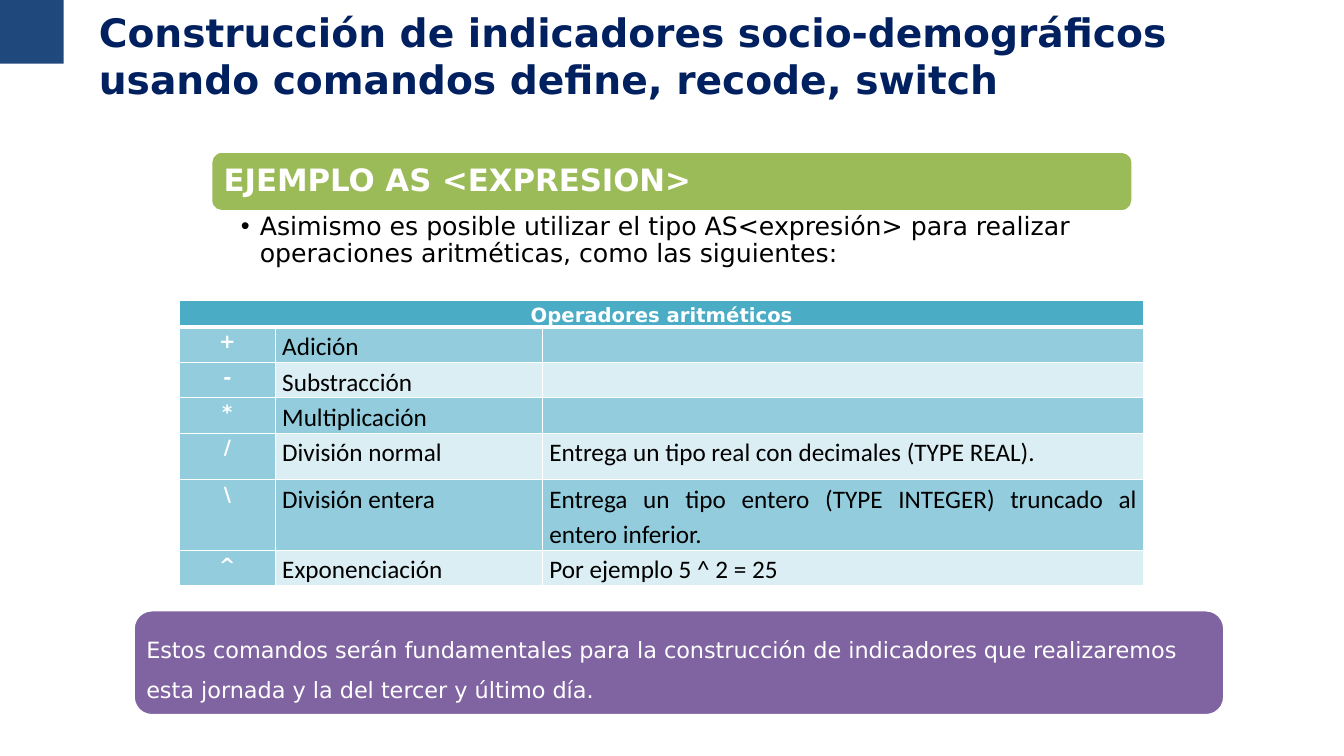
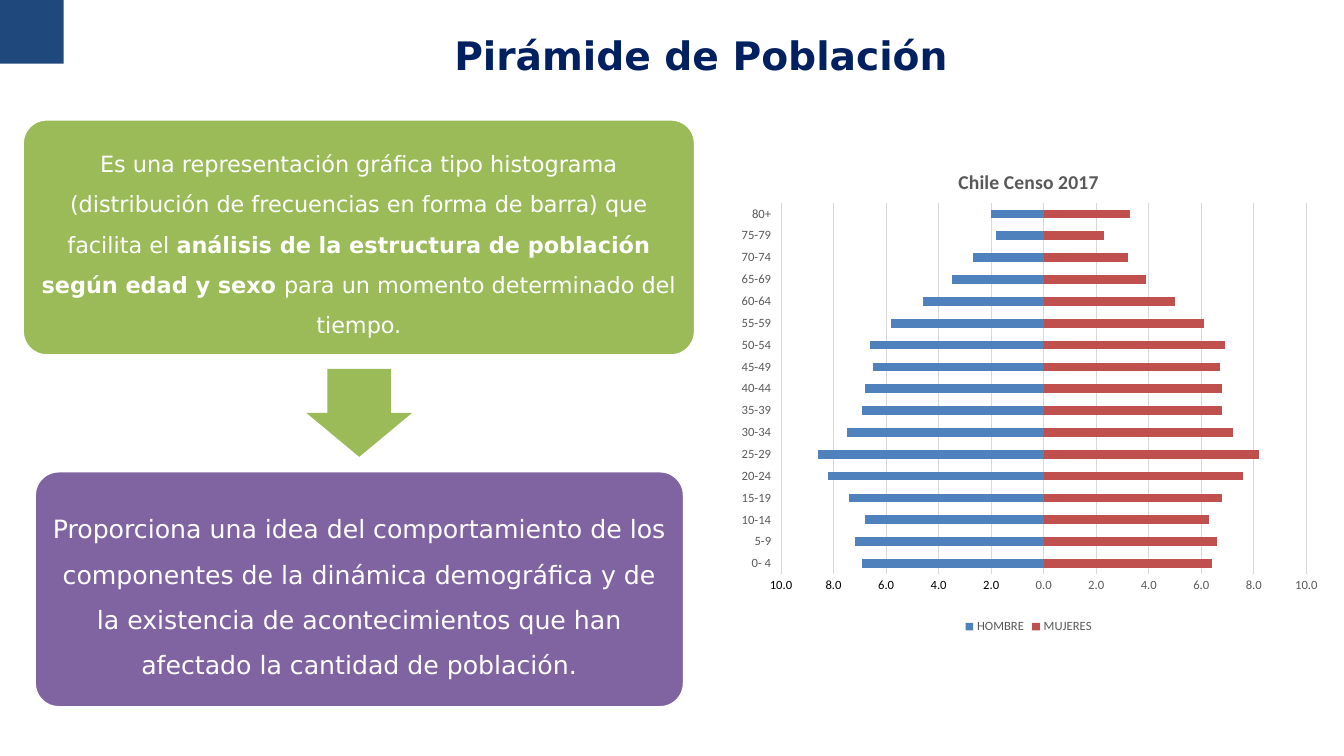
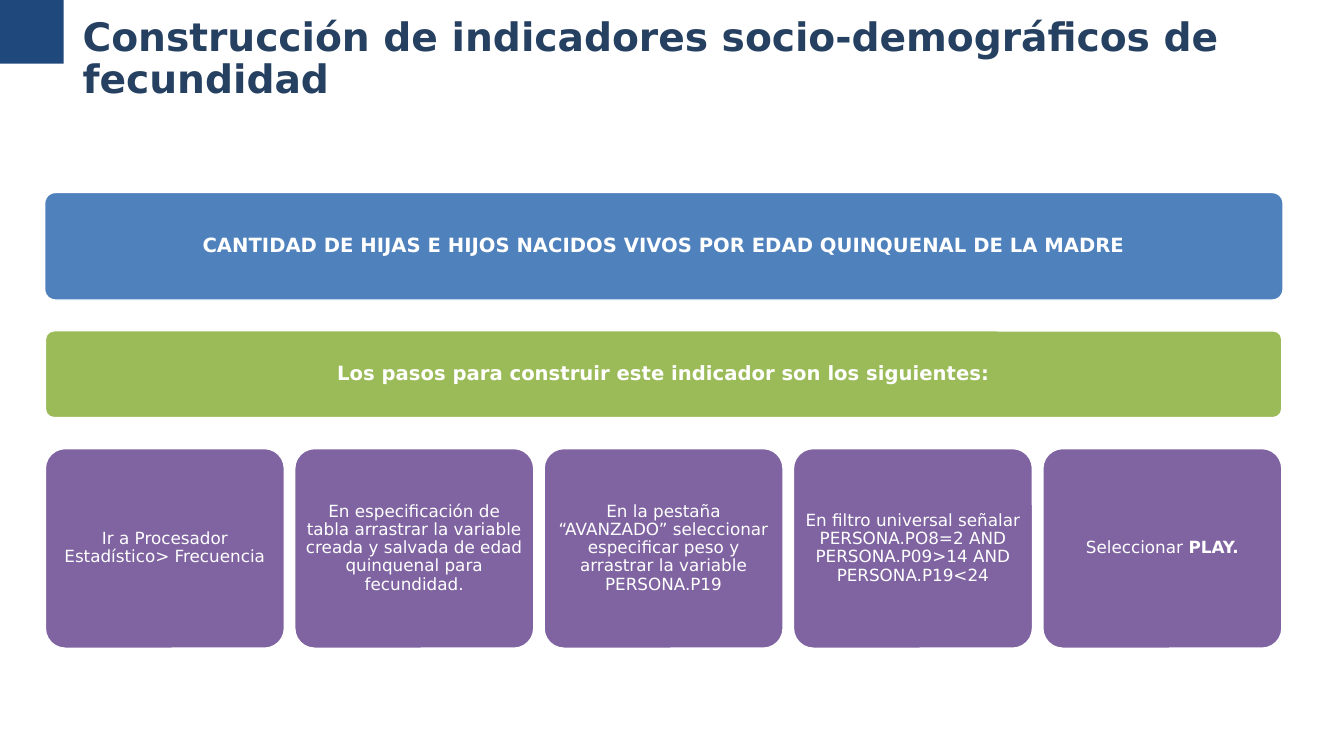
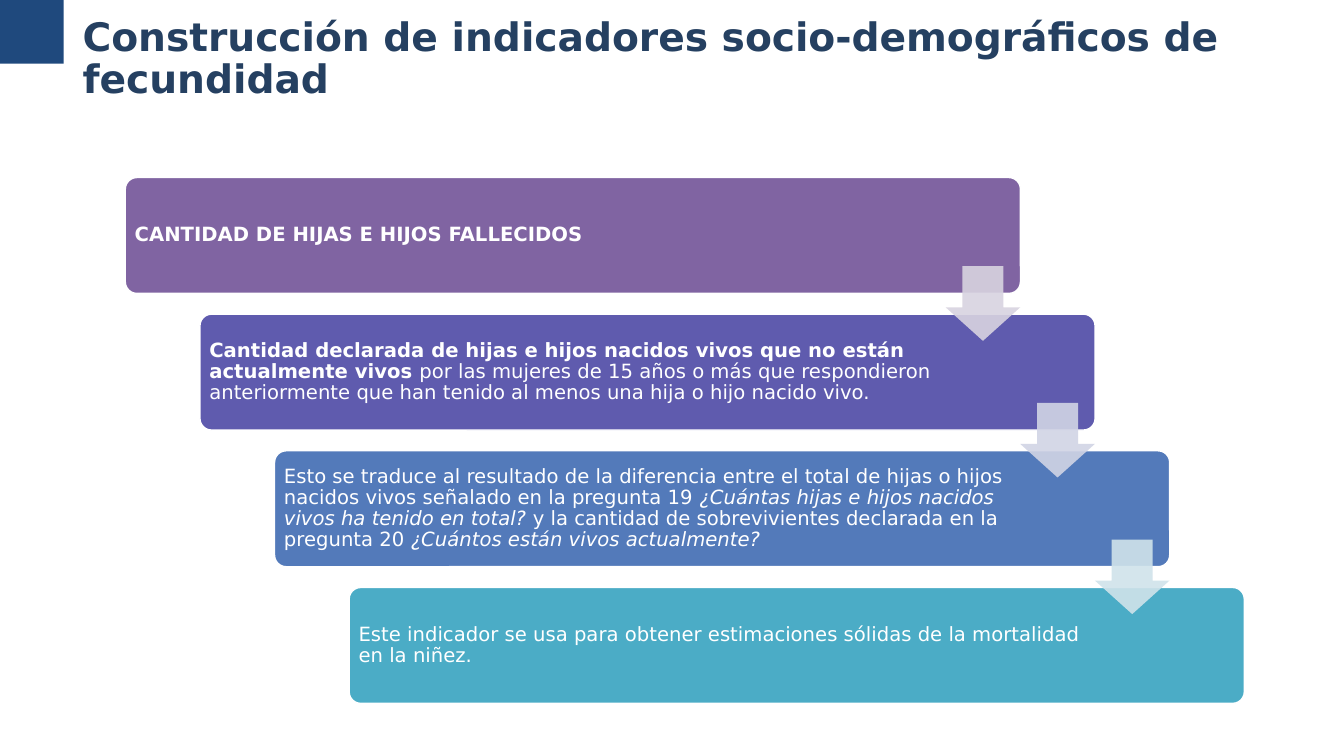
from pptx import Presentation
from pptx.chart.data import CategoryChartData
from pptx.dml.color import RGBColor
from pptx.enum.chart import XL_CHART_TYPE, XL_LEGEND_POSITION, XL_TICK_LABEL_POSITION, XL_TICK_MARK
from pptx.enum.shapes import MSO_SHAPE
from pptx.enum.text import MSO_ANCHOR, MSO_AUTO_SIZE, PP_ALIGN
from pptx.oxml import parse_xml
from pptx.oxml.ns import nsdecls, qn
from pptx.util import Pt

WHITE = RGBColor(0xFF, 0xFF, 0xFF)
BLACK = RGBColor(0x00, 0x00, 0x00)
NAVY = RGBColor(0x00, 0x20, 0x60)
SLATE = RGBColor(0x25, 0x40, 0x61)
CORNER_BLUE = RGBColor(0x1F, 0x49, 0x7D)
BLUE = RGBColor(0x4F, 0x81, 0xBD)
RED = RGBColor(0xC0, 0x50, 0x4D)
GREEN = RGBColor(0x9B, 0xBB, 0x59)
PURPLE = RGBColor(0x80, 0x64, 0xA2)
INDIGO = RGBColor(0x5F, 0x5B, 0xAE)
STEEL = RGBColor(0x53, 0x7A, 0xBA)
TEAL = RGBColor(0x4B, 0xAC, 0xC6)
TEAL_MID = RGBColor(0x93, 0xCD, 0xDD)
TEAL_PALE = RGBColor(0xDB, 0xEE, 0xF4)
LILAC_PALE = RGBColor(0xD8, 0xD3, 0xE0)
INDIGO_PALE = RGBColor(0xD1, 0xD4, 0xE5)
AQUA_PALE = RGBColor(0xD0, 0xE3, 0xEA)
GRAY = RGBColor(0x59, 0x59, 0x59)
GRID_GRAY = RGBColor(0xD9, 0xD9, 0xD9)

HEADING_FONT = "DejaVu Sans"
TABLE_FONT = "Calibri"
LAYOUT_CONTENT, LAYOUT_TITLE_ONLY = 1, 5

FERTILITY_TITLE = "Construcción de indicadores socio-demográficos de fecundidad"

OPERATORS = [
    ("+", "Adición", ""),
    ("-", "Substracción", ""),
    ("*", "Multiplicación", ""),
    ("/", "División normal", "Entrega un tipo real con decimales (TYPE REAL)."),
    ("\\", "División entera", "Entrega un tipo entero (TYPE INTEGER) truncado al entero inferior."),
    ("^", "Exponenciación", "Por ejemplo 5 ^ 2 = 25"),
]
OPERATOR_COLUMNS = [68.4, 190.8, 429.8]
OPERATOR_ROWS = [19, 25, 25, 25, 33, 50.6, 25]

AGES = ["0- 4"] + [f"{age}-{age + 4}" for age in range(5, 80, 5)] + ["80+"]
MEN = [-6.9, -7.2, -6.8, -7.4, -8.2, -8.6, -7.5, -6.9, -6.8,
       -6.5, -6.6, -5.8, -4.6, -3.5, -2.7, -1.8, -2]
WOMEN = [6.4, 6.6, 6.3, 6.8, 7.6, 8.2, 7.2, 6.8, 6.8,
         6.7, 6.9, 6.1, 5, 3.9, 3.2, 2.3, 3.3]

STEPS = [
    [("Ir a Procesador Estadístico> Frecuencia", "")],
    [("En especificación de tabla arrastrar la variable creada y salvada "
      "de edad quinquenal para fecundidad.", "")],
    [("En la pestaña “AVANZADO” seleccionar especificar peso y arrastrar "
      "la variable PERSONA.P19", "")],
    [("En filtro universal señalar PERSONA.PO8=2 AND PERSONA.P09>14 AND PERSONA.P19<24", "")],
    [("Seleccionar ", ""), ("PLAY.", "bold")],
]

DEATHS = [
    (PURPLE, LILAC_PALE, [("CANTIDAD DE HIJAS E HIJOS FALLECIDOS", "bold")]),
    (INDIGO, INDIGO_PALE, [
        ("Cantidad declarada de hijas e hijos nacidos vivos que no están actualmente vivos ", "bold"),
        ("por las mujeres de 15 años o más que respondieron anteriormente "
         "que han tenido al menos una hija o hijo nacido vivo.", "")]),
    (STEEL, AQUA_PALE, [
        ("Esto se traduce al resultado de la diferencia entre el total de hijas o hijos "
         "nacidos vivos señalado en la pregunta 19 ", ""),
        ("¿Cuántas hijas e hijos nacidos vivos ha tenido en total? ", "italic"),
        ("y la cantidad de sobrevivientes declarada en la pregunta 20 ", ""),
        ("¿Cuántos están vivos actualmente?", "italic")]),
    (TEAL, None, [("Este indicador se usa para obtener estimaciones sólidas "
                   "de la mortalidad en la niñez.", "")]),
]


def points(box):
    return [Pt(length) for length in box]


def place(shape, box):
    shape.left, shape.top, shape.width, shape.height = points(box)


def style_font(font, size, color, name=HEADING_FONT, bold=None):
    font.name, font.size, font.bold = name, Pt(size), bold
    font.color.rgb = color


def set_insets(holder, left, top, right, bottom):
    holder.margin_left, holder.margin_top = Pt(left), Pt(top)
    holder.margin_right, holder.margin_bottom = Pt(right), Pt(bottom)


def add_corner(deck, page):
    corner = page.shapes.add_shape(MSO_SHAPE.RECTANGLE, *points((0, 0, 45.5, 45.5)))
    corner.shadow.inherit = False
    corner.fill.solid()
    corner.fill.fore_color.rgb = CORNER_BLUE
    corner.line.fill.background()
    corner.element.nvSpPr.cNvPr.set("id", "90")
    deck.slide_master.shapes.element.insert(2, corner.element)


def add_page(deck, layout, title, box, color=NAVY, align=PP_ALIGN.LEFT, spacing=1.0):
    page = deck.slides.add_slide(deck.slide_layouts[layout])
    place(page.shapes.title, box)
    frame = page.shapes.title.text_frame
    frame.text = title
    frame.word_wrap = True
    frame.auto_size = MSO_AUTO_SIZE.NONE
    frame.vertical_anchor = MSO_ANCHOR.MIDDLE
    set_insets(frame, 7.2, 3.6, 7.2, 3.6)
    para = frame.paragraphs[0]
    para.alignment, para.line_spacing = align, spacing
    style_font(para.font, 28, color, bold=True)
    return page


def add_fertility_page(deck):
    return add_page(deck, LAYOUT_TITLE_ONLY, FERTILITY_TITLE, (51.8, 3.6, 882.7, 77.8), SLATE, spacing=0.9)


def add_panel(page, box, color, spans, size, align=PP_ALIGN.CENTER, spacing=0.9,
              inset=4.3, right_inset=None, corner=0.1):
    panel = page.shapes.add_shape(MSO_SHAPE.ROUNDED_RECTANGLE, *points(box))
    panel.shadow.inherit = False
    panel.adjustments[0] = corner
    panel.fill.solid()
    panel.fill.fore_color.rgb = color
    panel.line.color.rgb = WHITE
    panel.line.width = Pt(1)
    frame = panel.text_frame
    frame.word_wrap = True
    frame.vertical_anchor = MSO_ANCHOR.MIDDLE
    set_insets(frame, inset, inset, right_inset or inset, inset)
    para = frame.paragraphs[0]
    para.alignment, para.line_spacing = align, spacing
    style_font(para.font, size, WHITE)
    for text, emphasis in spans:
        span = para.add_run()
        span.text = text
        if emphasis:
            setattr(span.font, emphasis, True)


def add_down_arrow(page, box, color, shaft, head, opacity=None):
    arrow = page.shapes.add_shape(MSO_SHAPE.DOWN_ARROW, *points(box))
    arrow.shadow.inherit = False
    arrow.adjustments[0], arrow.adjustments[1] = shaft, head
    arrow.fill.solid()
    arrow.fill.fore_color.rgb = color
    arrow.line.fill.background()
    if opacity:
        for tint in arrow.element.iter(qn("a:srgbClr")):
            tint.append(parse_xml(f'<a:alpha {nsdecls("a")} val="{opacity * 1000}"/>'))


def fill_bullet(page, box, text):
    body = page.placeholders[1]
    place(body, box)
    frame = body.text_frame
    frame.text = text
    frame.word_wrap = True
    frame.auto_size = MSO_AUTO_SIZE.NONE
    set_insets(frame, 20.9, 2.2, 10, 2.2)
    para = frame.paragraphs[0]
    properties = para._p.get_or_add_pPr()
    properties.set("marL", str(Pt(13.5)))
    properties.set("indent", str(Pt(-13.5)))
    para.space_before = Pt(0)
    para.line_spacing = 0.9
    style_font(para.font, 18, BLACK)


def style_cell(cell, text, fill, align, size, color, font, bold, bottom=1):
    properties = cell._tc.get_or_add_tcPr()
    for side, width in (("L", 1), ("R", 1), ("T", 1), ("B", bottom)):
        properties.append(parse_xml(
            f'<a:ln{side} {nsdecls("a")} w="{Pt(width)}"><a:solidFill>'
            f'<a:srgbClr val="{WHITE}"/></a:solidFill></a:ln{side}>'))
    cell.fill.solid()
    cell.fill.fore_color.rgb = fill
    set_insets(cell, 5, 0, 5, 0)
    cell.text = text
    para = cell.text_frame.paragraphs[0]
    para.alignment, para.line_spacing = align, 1.15
    style_font(para.font, size, color, font, bold)


def add_operator_table(page, left, top):
    box = (left, top, sum(OPERATOR_COLUMNS), sum(OPERATOR_ROWS))
    table = page.shapes.add_table(len(OPERATOR_ROWS), len(OPERATOR_COLUMNS), *points(box)).table
    for column, width in zip(table.columns, OPERATOR_COLUMNS):
        column.width = Pt(width)
    for row, height in zip(table.rows, OPERATOR_ROWS):
        row.height = Pt(height)
    symbol_style = (PP_ALIGN.CENTER, 14, WHITE, HEADING_FONT, True)
    detail_style = (PP_ALIGN.JUSTIFY, 18, BLACK, TABLE_FONT, False)
    table.cell(0, 0).merge(table.cell(0, 2))
    for index in range(3):
        heading = "" if index else "Operadores aritméticos"
        style_cell(table.cell(0, index), heading, TEAL, *symbol_style, bottom=3)
    for row, (symbol, *details) in enumerate(OPERATORS, 1):
        style_cell(table.cell(row, 0), symbol, TEAL_MID, *symbol_style)
        for column, text in enumerate(details, 1):
            style_cell(table.cell(row, column), text, TEAL_MID if row % 2 else TEAL_PALE, *detail_style)


def add_pyramid(page, box):
    data = CategoryChartData(number_format="0.0")
    data.categories = AGES
    data.add_series("HOMBRE", MEN)
    data.add_series("MUJERES", WOMEN)
    chart = page.shapes.add_chart(XL_CHART_TYPE.BAR_STACKED, *points(box), data).chart
    style_font(chart.font, 9, GRAY, TABLE_FONT)
    chart.has_title = True
    chart.chart_title.text_frame.text = "Chile Censo 2017"
    style_font(chart.chart_title.text_frame.paragraphs[0].font, 14, GRAY, TABLE_FONT, True)
    chart.has_legend = True
    chart.legend.position = XL_LEGEND_POSITION.BOTTOM
    chart.legend.include_in_layout = False
    style_font(chart.legend.font, 9, GRAY, TABLE_FONT)

    plot = chart.plots[0]
    plot.vary_by_categories = False
    plot.gap_width, plot.overlap = 150, 100
    for series, color in zip(plot.series, (BLUE, RED)):
        series.invert_if_negative = False
        series.format.fill.solid()
        series.format.fill.fore_color.rgb = color

    ages, shares = chart.category_axis, chart.value_axis
    for axis in (ages, shares):
        axis.major_tick_mark = axis.minor_tick_mark = XL_TICK_MARK.NONE
        style_font(axis.tick_labels.font, 9, GRAY, TABLE_FONT)
    ages.tick_label_position = XL_TICK_LABEL_POSITION.LOW
    ages.format.line.color.rgb = GRID_GRAY
    ages.format.line.width = Pt(0.75)
    shares.minimum_scale, shares.maximum_scale, shares.major_unit = -10, 10, 2
    shares.tick_labels.number_format = "0.0;[Black]0.0"
    shares.tick_labels.number_format_is_linked = False
    shares.format.line.fill.background()
    shares.major_gridlines.format.line.color.rgb = GRID_GRAY
    shares.major_gridlines.format.line.width = Pt(0.75)

    plot_area = chart.element.find(".//" + qn("c:plotArea"))
    for layout in plot_area.findall(qn("c:layout")):
        plot_area.remove(layout)
    sizes = "".join(f'<c:{tag} val="{value}"/>' for tag, value in (
        ("layoutTarget", "inner"), ("xMode", "edge"), ("yMode", "edge"),
        ("x", 0.09), ("y", 0.11), ("w", 0.87), ("h", 0.76)))
    plot_area.insert(0, parse_xml(
        f'<c:layout {nsdecls("c")}><c:manualLayout>{sizes}</c:manualLayout></c:layout>'))


def build_operators(deck):
    page = add_page(
        deck, LAYOUT_CONTENT,
        "Construcción de indicadores socio-demográficos usando comandos define, recode, switch",
        (63.4, 0, 869, 78.5))
    add_corner(deck, page)
    add_panel(page, (151.2, 108.7, 657.4, 41.8), GREEN, [("EJEMPLO AS <EXPRESION>", "bold")], 22,
              PP_ALIGN.LEFT, inset=6.5, corner=0.17)
    fill_bullet(page, (151.2, 150.5, 657.4, 51),
                "Asimismo es posible utilizar el tipo AS<expresión> para realizar "
                "operaciones aritméticas, como las siguientes:")
    add_operator_table(page, 128.2, 214.6)
    add_panel(page, (95.8, 436.3, 778.3, 74.2), PURPLE,
              [("Estos comandos serán fundamentales para la construcción de indicadores "
                "que realizaremos esta jornada y la del tercer y último día.", "")],
              16, PP_ALIGN.LEFT, 1.5, inset=5, corner=0.17)


def build_pyramid(deck):
    page = add_page(deck, LAYOUT_TITLE_ONLY, "Pirámide de Población",
                    (66.2, 0, 869, 78.5), align=PP_ALIGN.CENTER)
    add_pyramid(page, (519.1, 106.6, 431.3, 349.2))
    add_panel(page, (16.6, 85.7, 479.5, 167.8), GREEN, [
        ("Es una representación gráfica tipo histograma (distribución de frecuencias "
         "en forma de barra) que facilita el ", ""),
        ("análisis de la estructura de población según edad y sexo ", "bold"),
        ("para un momento determinado del tiempo.", "")], 16, spacing=1.5, inset=5)
    add_down_arrow(page, (218.8, 263.5, 75.6, 62.8), GREEN, 0.6, 0.5)
    add_panel(page, (25.2, 337, 463, 167.8), PURPLE,
              [("Proporciona una idea del comportamiento de los componentes de la dinámica "
                "demográfica y de la existencia de acontecimientos que han afectado "
                "la cantidad de población.", "")], 18, spacing=1.5, inset=5)


def build_births(deck):
    page = add_fertility_page(deck)
    add_panel(page, (31.9, 137.5, 884.6, 76.8), BLUE,
              [("CANTIDAD DE HIJAS E HIJOS NACIDOS VIVOS POR EDAD QUINQUENAL DE LA MADRE", "bold")], 14)
    left, width, gap = 32.4, 883.2, 7.4
    add_panel(page, (left, 236.3, width, 62), GREEN,
              [("Los pasos para construir este indicador son los siguientes:", "bold")], 14)
    step_width = (width - gap * (len(STEPS) - 1)) / len(STEPS)
    for index, spans in enumerate(STEPS):
        add_panel(page, (left + index * (step_width + gap), 320.4, step_width, 142.6),
                  PURPLE, spans, 12, inset=3.6)


def build_deaths(deck):
    page = add_fertility_page(deck)
    corners = [(89.5 + 53.3 * index, 126.8 + 97.6 * index) for index in range(len(DEATHS))]
    for (left, top), (color, _, spans) in zip(corners, DEATHS):
        add_panel(page, (left, top, 639.4, 82.8), color, spans, 14, PP_ALIGN.LEFT, right_inset=114)
    for (left, top), (_, arrow_color, _) in zip(corners, DEATHS):
        if arrow_color:
            add_down_arrow(page, (left + 586, top + 63.4, 53.3, 53.3), arrow_color, 0.55, 0.45, opacity=90)


def main():
    deck = Presentation()
    deck.slide_width, deck.slide_height = Pt(960), Pt(540)
    for build in (build_operators, build_pyramid, build_births, build_deaths):
        build(deck)
    deck.save("out.pptx")


if __name__ == "__main__":
    main()
